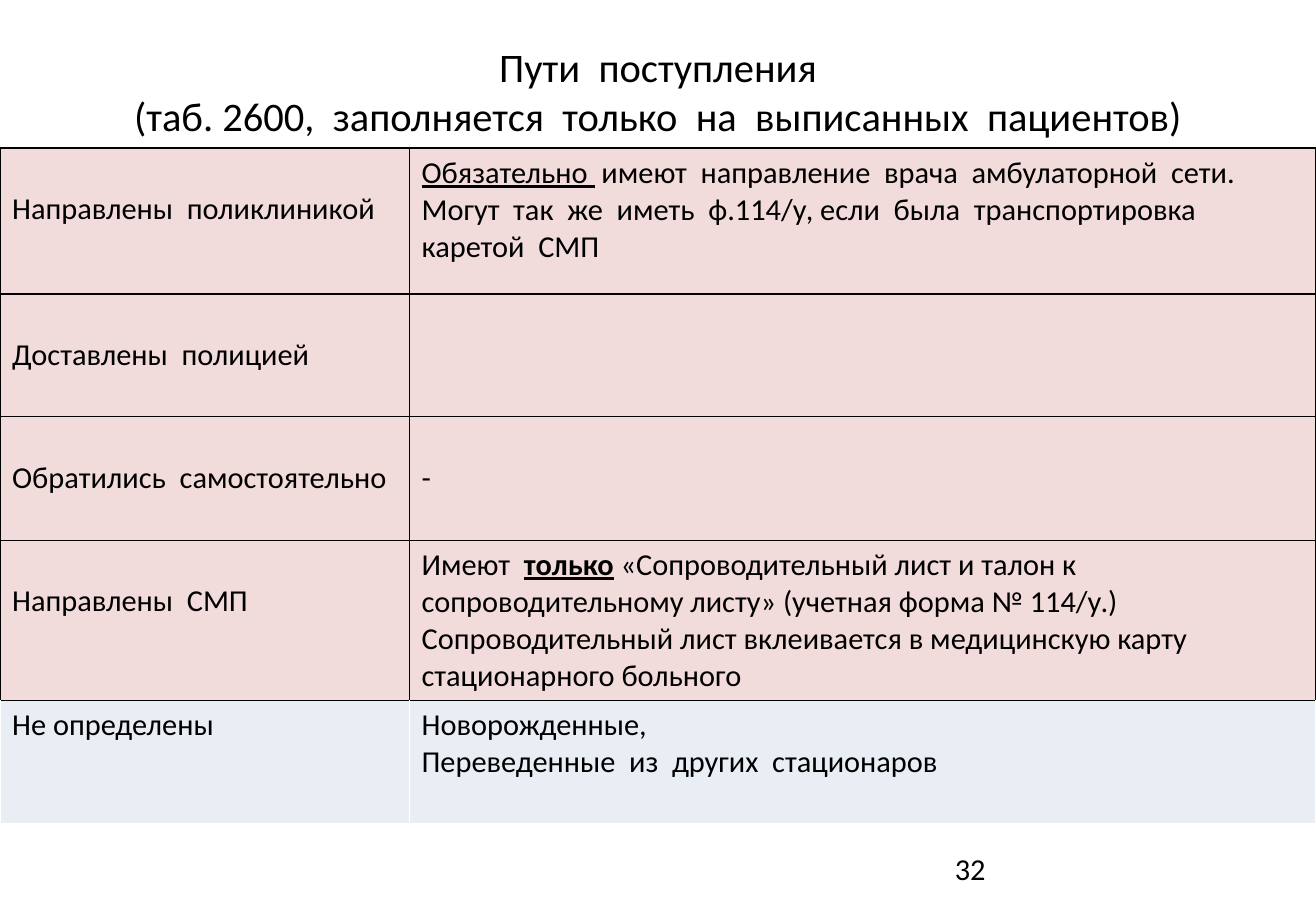
from lxml import etree
from pptx import Presentation
from pptx.dml.color import RGBColor
from pptx.enum.text import MSO_ANCHOR, PP_ALIGN
from pptx.oxml.ns import qn
from pptx.util import Inches, Pt

CENTER, LEFT = PP_ALIGN.CENTER, PP_ALIGN.LEFT
TOP = MSO_ANCHOR.TOP
FONT = "Calibri"
COLORS = {"text": "000000", "pink": "F2DCDB", "blue": "E9EDF4",
          "line": "000000", "pale_line": "FFFFFF"}

# A paragraph is a list of (text, bold, underline) runs
TITLE = ["Пути  поступления",
         "(таб. 2600,  заполняется  только  на  выписанных  пациентов)"]
PAGE_NUMBER = "32"


def plain(text):
    return [(text, False, False)]


# (row height, fill, left paragraphs, left lowered, right paragraphs, right lowered)
ROWS = [
    (1.2, "pink", [plain("Направлены  поликлиникой")], True,
     [[("Обязательно ", False, True),
       (" имеют  направление  врача  амбулаторной  сети. Могут  так  же  иметь  "
        "ф.114/у, если  была  транспортировка  каретой  СМП", False, False)]], False),
    (1.01, "pink", [plain("Доставлены  полицией")], True, [], False),
    (1.02, "pink", [plain("Обратились  самостоятельно")], True, [plain("-")], True),
    (1.32, "pink", [plain("Направлены  СМП")], True,
     [[("Имеют  ", False, False), ("только", True, True),
       (" «Сопроводительный лист и талон к сопроводительному листу» "
        "(учетная форма № 114/у.) Сопроводительный лист вклеивается в "
        "медицинскую карту стационарного больного", False, False)]], False),
    (1.01, "blue", [plain("Не определены")], False,
     [plain("Новорожденные,"), plain("Переведенные  из  других  стационаров")], False),
]
COL_WIDTHS = [3.37, 7.46]
TABLE_TOP = 1.22
MARGIN, LOWERED_MARGIN = 0.05, 0.35


def style(font, size):
    font.name = FONT
    font.size = Pt(size)
    font.color.rgb = RGBColor.from_string(COLORS["text"])


def write(tf, paragraphs, size, align=LEFT):
    tf.word_wrap = True
    for i, runs in enumerate(paragraphs):
        p = tf.paragraphs[0] if i == 0 else tf.add_paragraph()
        p.alignment = align
        for text, bold, underline in runs:
            r = p.add_run()
            r.text = text
            style(r.font, size)
            r.font.bold = bold
            r.font.underline = underline


def add_text(s, box, paragraphs, size, align=LEFT):
    tf = s.shapes.add_textbox(*map(Inches, box)).text_frame
    tf.vertical_anchor = TOP
    write(tf, paragraphs, size, align)


def set_borders(cell, colors):
    """Draw 1 pt cell borders; colors maps L, R, T, B to hex strings."""
    tcPr = cell._tc.get_or_add_tcPr()
    for side, color in colors.items():
        ln = etree.SubElement(tcPr, qn("a:ln" + side), w=str(Pt(1)))
        fill = etree.SubElement(ln, qn("a:solidFill"))
        etree.SubElement(fill, qn("a:srgbClr"), val=color)


def fill_cell(cell, fill, paragraphs, lowered):
    edge = COLORS["line" if fill == "pink" else "pale_line"]
    set_borders(cell, {"L": edge, "R": edge, "T": COLORS["line"], "B": edge})
    cell.fill.solid()
    cell.fill.fore_color.rgb = RGBColor.from_string(COLORS[fill])
    cell.vertical_anchor = TOP
    cell.margin_top = Inches(LOWERED_MARGIN if lowered else MARGIN)
    write(cell.text_frame, paragraphs, 18)


def add_routes_table(s):
    height = sum(row[0] for row in ROWS)
    table = s.shapes.add_table(len(ROWS), len(COL_WIDTHS), 0, Inches(TABLE_TOP),
                               Inches(sum(COL_WIDTHS)), Inches(height)).table
    table.first_row = table.horz_banding = False
    for column, width in zip(table.columns, COL_WIDTHS):
        column.width = Inches(width)
    for i, (row_height, fill, left, left_low, right, right_low) in enumerate(ROWS):
        table.rows[i].height = Inches(row_height)
        fill_cell(table.cell(i, 0), fill, left, left_low)
        fill_cell(table.cell(i, 1), fill, right, right_low)


prs = Presentation()
prs.slide_width, prs.slide_height = Inches(10.83), Inches(7.5)
s = prs.slides.add_slide(prs.slide_layouts[6])
add_text(s, (0.54, 0.3, 9.75, 1.25), [plain(line) for line in TITLE], 24, CENTER)
add_text(s, (7.76, 6.95, 2.53, 0.4), [plain(PAGE_NUMBER)], 18)
add_routes_table(s)
prs.save("out.pptx")
